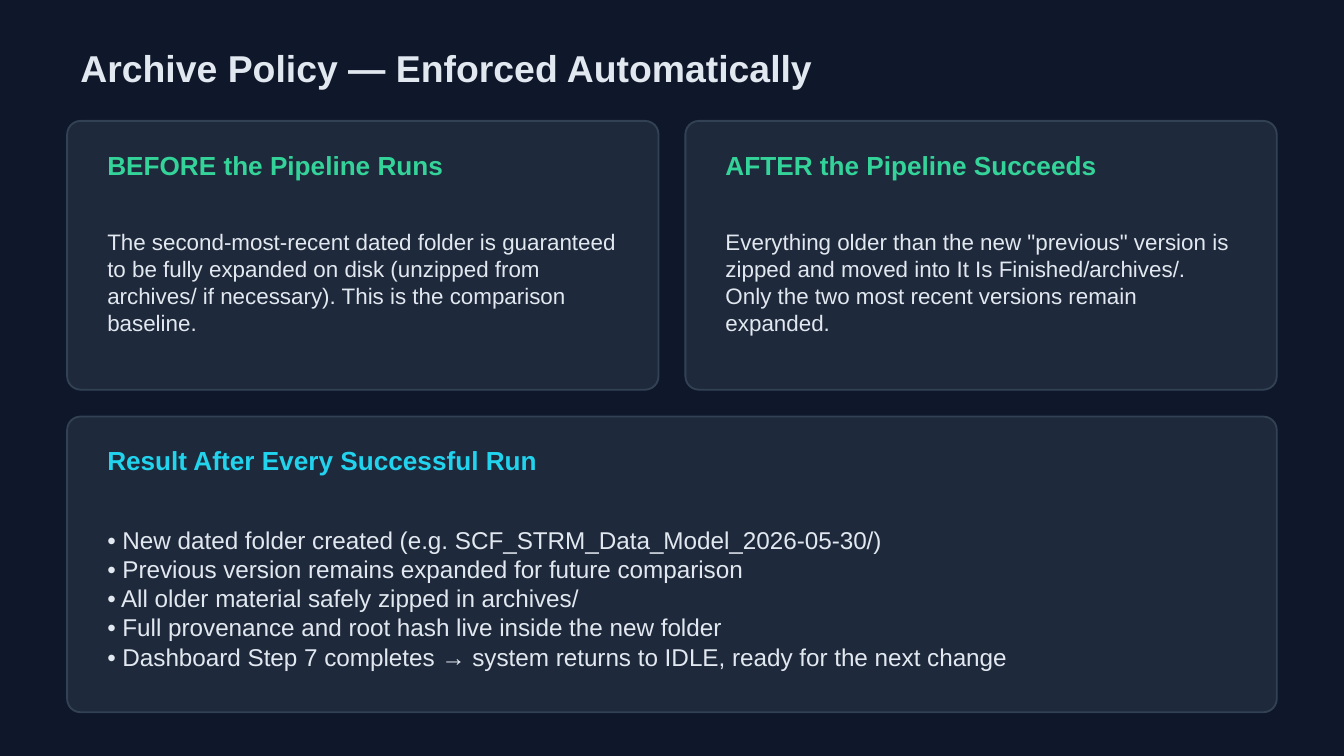
from pptx import Presentation
from pptx.dml.color import RGBColor
from pptx.enum.shapes import MSO_SHAPE
from pptx.enum.text import MSO_ANCHOR
from pptx.util import Inches, Pt

NAVY, SLATE, BORDER = "0F172A", "1E293B", "334155"
LIGHT, GREEN, CYAN = "E2E8F0", "34D399", "22D3EE"

TITLE = "Archive Policy — Enforced Automatically"
STAGES = [
    ("BEFORE the Pipeline Runs",
     "The second-most-recent dated folder is guaranteed to be fully expanded on disk "
     "(unzipped from archives/ if necessary). This is the comparison baseline."),
    ("AFTER the Pipeline Succeeds",
     'Everything older than the new "previous" version is zipped and moved into '
     "It Is Finished/archives/. Only the two most recent versions remain expanded."),
]
RESULT_HEADING = "Result After Every Successful Run"
RESULTS = [
    "• New dated folder created (e.g. SCF_STRM_Data_Model_2026-05-30/)",
    "• Previous version remains expanded for future comparison",
    "• All older material safely zipped in archives/",
    "• Full provenance and root hash live inside the new folder",
    "• Dashboard Step 7 completes → system returns to IDLE, ready for the next change",
]

PAGE_WIDTH = 10
PAGE_HEIGHT = PAGE_WIDTH * 9 / 16
MARGIN, GAP, PADDING = 0.5, 0.2, 0.2
CONTENT_WIDTH = PAGE_WIDTH - 2 * MARGIN
STAGE_TOP, STAGE_HEIGHT, RESULT_HEIGHT = 0.9, 2, 2.2
CORNER_RADIUS = 0.1


def color(value):
    return RGBColor.from_string(value)


def add_panel(page, kind, left, top, width, height, fill, border=None):
    panel = page.shapes.add_shape(kind, Inches(left), Inches(top), Inches(width), Inches(height))
    panel.shadow.inherit = False
    panel.fill.solid()
    panel.fill.fore_color.rgb = color(fill)
    if border:
        panel.line.color.rgb = color(border)
        panel.line.width = Pt(1)
    else:
        panel.line.fill.background()
    return panel


def add_text(page, text, left, top, width, height, size, fill=LIGHT, bold=False):
    """Add a text box with one paragraph per line of text."""
    box = page.shapes.add_textbox(Inches(left), Inches(top), Inches(width), Inches(height))
    frame = box.text_frame
    frame.word_wrap = True
    frame.vertical_anchor = MSO_ANCHOR.MIDDLE
    frame.text = text
    for para in frame.paragraphs:
        for span in para.runs:
            span.font.name = "Arial"
            span.font.size = Pt(size)
            span.font.bold = bold
            span.font.color.rgb = color(fill)


def add_card(page, heading, body, left, top, width, height, accent, body_height, body_size):
    card = add_panel(page, MSO_SHAPE.ROUNDED_RECTANGLE, left, top, width, height, SLATE, BORDER)
    card.adjustments[0] = CORNER_RADIUS / min(width, height)

    text_left, text_width = left + PADDING, width - 2 * PADDING
    add_text(page, heading, text_left, top + 0.15, text_width, 0.35,
             size=14, fill=accent, bold=True)
    add_text(page, body, text_left, top + 0.6, text_width, body_height, size=body_size)


def main():
    deck = Presentation()
    deck.slide_width, deck.slide_height = Inches(PAGE_WIDTH), Inches(PAGE_HEIGHT)
    page = deck.slides.add_slide(deck.slide_layouts[6])

    add_panel(page, MSO_SHAPE.RECTANGLE, 0, 0, PAGE_WIDTH, PAGE_HEIGHT, NAVY)
    add_text(page, TITLE, MARGIN, 0.25, CONTENT_WIDTH, 0.5, size=20, bold=True)

    stage_width = (CONTENT_WIDTH - GAP * (len(STAGES) - 1)) / len(STAGES)
    for index, (heading, body) in enumerate(STAGES):
        add_card(page, heading, body, MARGIN + index * (stage_width + GAP), STAGE_TOP,
                 stage_width, STAGE_HEIGHT, GREEN, body_height=1.2, body_size=12)

    add_card(page, RESULT_HEADING, "\n".join(RESULTS), MARGIN, STAGE_TOP + STAGE_HEIGHT + GAP,
             CONTENT_WIDTH, RESULT_HEIGHT, CYAN, body_height=1.5, body_size=13)

    deck.save("out.pptx")


if __name__ == "__main__":
    main()
